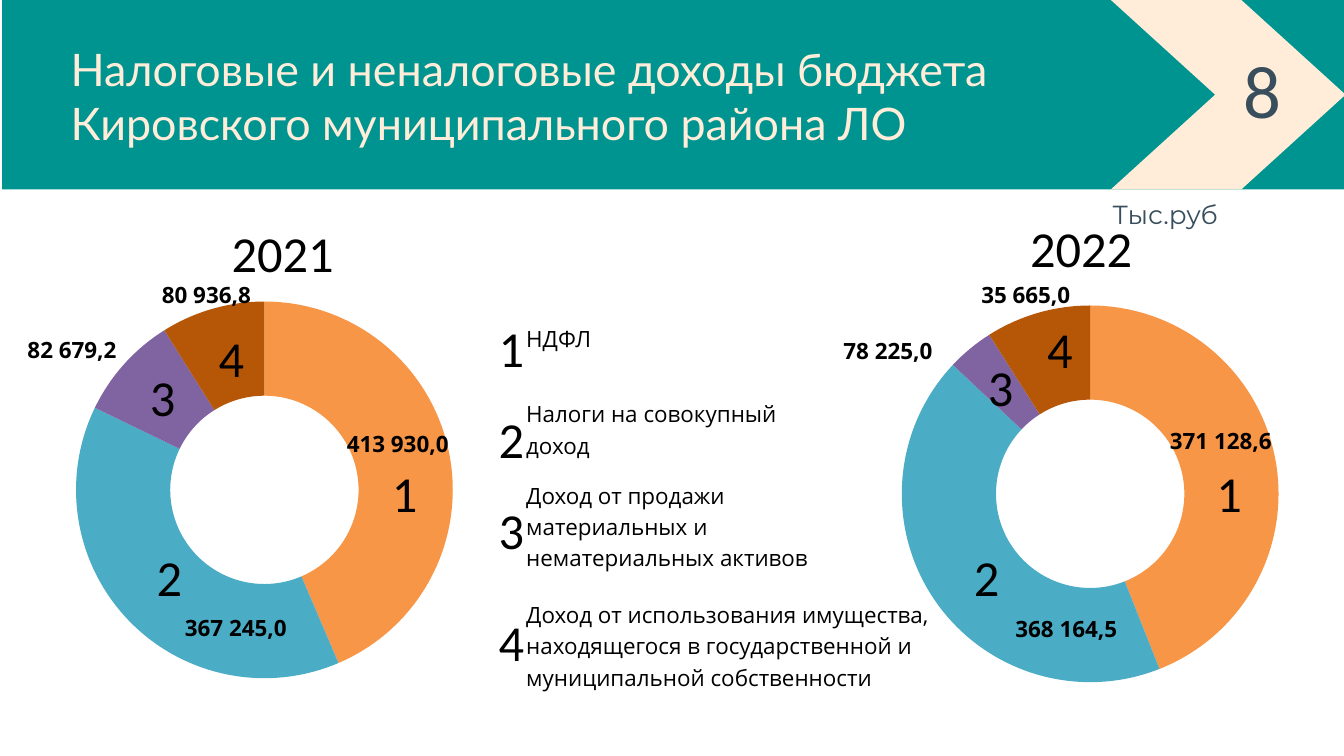
from lxml import etree
from pptx import Presentation
from pptx.chart.data import CategoryChartData
from pptx.dml.color import RGBColor
from pptx.enum.chart import XL_CHART_TYPE
from pptx.enum.shapes import MSO_SHAPE
from pptx.enum.text import MSO_ANCHOR, MSO_AUTO_SIZE, PP_ALIGN
from pptx.oxml.ns import qn
from pptx.util import Cm, Pt

DOUGHNUT = XL_CHART_TYPE.DOUGHNUT
RECT = MSO_SHAPE.RECTANGLE
TOP = MSO_ANCHOR.TOP
NO_FIT = MSO_AUTO_SIZE.NONE
LEFT, CENTER = PP_ALIGN.LEFT, PP_ALIGN.CENTER

COLORS = {
    "teal": "009490", "cream": "FFEDD9", "slate": "384E5D", "black": "000000",
    "orange": "F79646", "blue": "4BACC6", "purple": "8064A2", "brown": "B65708",
}
SLICES = ["orange", "blue", "purple", "brown"]
BIG = dict(size=54, font="Calibri", leading=89.6)
SMALL = dict(size=24, font="Open Sans", leading=33.6)

CHARTS = [
    dict(left=0.84, year="2021", year_at=(7.92, -3.58), shares=[44, 39, 9, 9],
         plot=(0.11, 0.02, 0.78, 0.95),
         numbers=[(13.97, 5.51), (5.08, 8.69), (4.83, 1.88), (7.42, 0.38)],
         amounts=[("413 930,0", 12.27, 4.98), ("367 245,0", 6.15, 11.96),
                  ("82 679,2", 0.2, 1.42), ("80 936,8", 5.28, -0.64)]),
    dict(left=31.32, year="2022", year_at=(7.62, -3.76), shares=[44, 43, 4, 9],
         plot=(0.15, 0.03, 0.78, 0.95),
         numbers=[(14.66, 5.51), (5.49, 8.69), (6.02, 1.47), (8.26, 0.05)],
         amounts=[("371 128,6", 12.9, 4.88), ("368 164,5", 7.06, 11.99),
                  ("78 225,0", 0.56, 1.47), ("35 665,0", 5.77, -0.64)]),
]
LEGEND = [
    ("НДФЛ", 0, 0.99, 6.17, 1),
    ("Налоги на совокупный доход", 3.43, 3.84, 9.93, 2),
    ("Доход от продажи материальных и нематериальных активов",
     6.86, 6.91, 10.69, 3),
    ("Доход от использования имущества, находящегося в государственной "
     "и муниципальной собственности", 11.1, 11.43, 15.24, 3),
]


def rgb(name):
    return RGBColor.from_string(COLORS[name])


def paint(sp, color):
    sp.shadow.inherit = False
    sp.fill.solid()
    sp.fill.fore_color.rgb = rgb(color)
    sp.line.fill.background()


def write(sp, lines, size, font, leading, color="black", bold=False, align=LEFT):
    tf = sp.text_frame
    tf.word_wrap = True
    tf.auto_size = NO_FIT
    tf.vertical_anchor = TOP
    tf.margin_left = tf.margin_top = tf.margin_right = tf.margin_bottom = 0
    for i, line in enumerate(lines):
        p = tf.add_paragraph() if i else tf.paragraphs[0]
        p.alignment = align
        p.line_spacing = Pt(leading)
        p.space_before = Pt(0)
        r = p.add_run()
        r.text = line
        r.font.size = Pt(size)
        r.font.name = font
        r.font.bold = bold
        r.font.color.rgb = rgb(color)


def add_text(s, x, y, w, h, text, **style):
    sp = s.shapes.add_textbox(Cm(x), Cm(y), Cm(w), Cm(h))
    write(sp, [text], **style)


def add_header(s, x, y, w, h):
    band = s.shapes.add_shape(RECT, Cm(x), Cm(y), Cm(w), Cm(h))
    paint(band, "teal")

    start, notch, shoulder, tip = x + 41.91, x + 45.85, x + 46.84, x + 50.78
    builder = s.shapes.build_freeform(Cm(start), Cm(y))
    builder.add_line_segments([
        (Cm(shoulder), Cm(y)), (Cm(tip), Cm(y + h / 2)),
        (Cm(shoulder), Cm(y + h)), (Cm(start), Cm(y + h)),
        (Cm(notch), Cm(y + h / 2)),
    ])
    paint(builder.convert_to_shape(), "cream")

    title = s.shapes.title
    title.left, title.top = Cm(x + 2.59), Cm(y + 1.57)
    title.width, title.height = Cm(45.09), Cm(4.01)
    write(title, ["Налоговые и неналоговые доходы бюджета",
                  "Кировского муниципального района ЛО"],
          size=48, font="Lato", leading=57.6, color="cream")
    title.element.getparent().append(title.element)

    add_text(s, x + 46.91, y + 1.88, 1.7, 3.2, "8",
             size=80, font="Calibri", leading=89.6, color="slate")


def set_plot_area(chart, box):
    plot_area = chart.element.chart.plotArea
    for old in plot_area.findall(qn("c:layout")):
        plot_area.remove(old)
    layout = etree.Element(qn("c:layout"))
    manual = etree.SubElement(layout, qn("c:manualLayout"))
    values = [("layoutTarget", "inner"), ("xMode", "edge"), ("yMode", "edge")]
    values += zip("xywh", box)
    for tag, value in values:
        etree.SubElement(manual, qn("c:" + tag)).set("val", str(value))
    plot_area.insert(0, layout)


def add_doughnut(s, x, y, w, h, item):
    data = CategoryChartData()
    data.categories = ["1", "2", "3", "4"]
    data.add_series("Series 1", item["shares"])
    chart = s.shapes.add_chart(DOUGHNUT, Cm(x), Cm(y), Cm(w), Cm(h), data).chart
    chart.has_legend = False
    chart.has_title = False
    chart.font.size = Pt(10)
    chart.font.name = "Calibri"
    chart.font.color.rgb = rgb("black")
    plot = chart.plots[0]
    plot.vary_by_categories = True
    for i, color in enumerate(SLICES):
        fmt = plot.series[0].points[i].format
        fmt.fill.solid()
        fmt.fill.fore_color.rgb = rgb(color)
        fmt.line.fill.background()
    set_plot_area(chart, item["plot"])

    dx, dy = item["year_at"]
    add_text(s, x + dx, y + dy, 6.83, 3.2, item["year"], **BIG)
    for n, (dx, dy) in enumerate(item["numbers"], 1):
        add_text(s, x + dx, y + dy, 1.04, 2.87, str(n), **BIG)
    for amount, dx, dy in item["amounts"]:
        add_text(s, x + dx, y + dy, 6.17, 1.12, amount, bold=True, **SMALL)


def add_legend(s, x, y):
    for n, (text, number_y, text_y, w, lines) in enumerate(LEGEND, 1):
        add_text(s, x, y + number_y, 1.04, 2.87, str(n), **BIG)
        add_text(s, x + 1.04, y + text_y, w, 1.21 * lines, text, **SMALL)


def main():
    prs = Presentation()
    prs.slide_width, prs.slide_height = Cm(50.8), Cm(28.58)
    s = prs.slides.add_slide(prs.slide_layouts[5])
    add_header(s, 0.08, 0, 50.8, 7.16)
    for item in CHARTS:
        add_doughnut(s, item["left"], 11.1, 18.31, 14.99, item)
    add_legend(s, 18.85, 11.13)
    add_text(s, 38.05, 7.24, 11.99, 1.35, "Тыс.руб", size=28,
             font="Montserrat", leading=40.6, color="slate", align=CENTER)
    prs.save("out.pptx")


if __name__ == "__main__":
    main()
